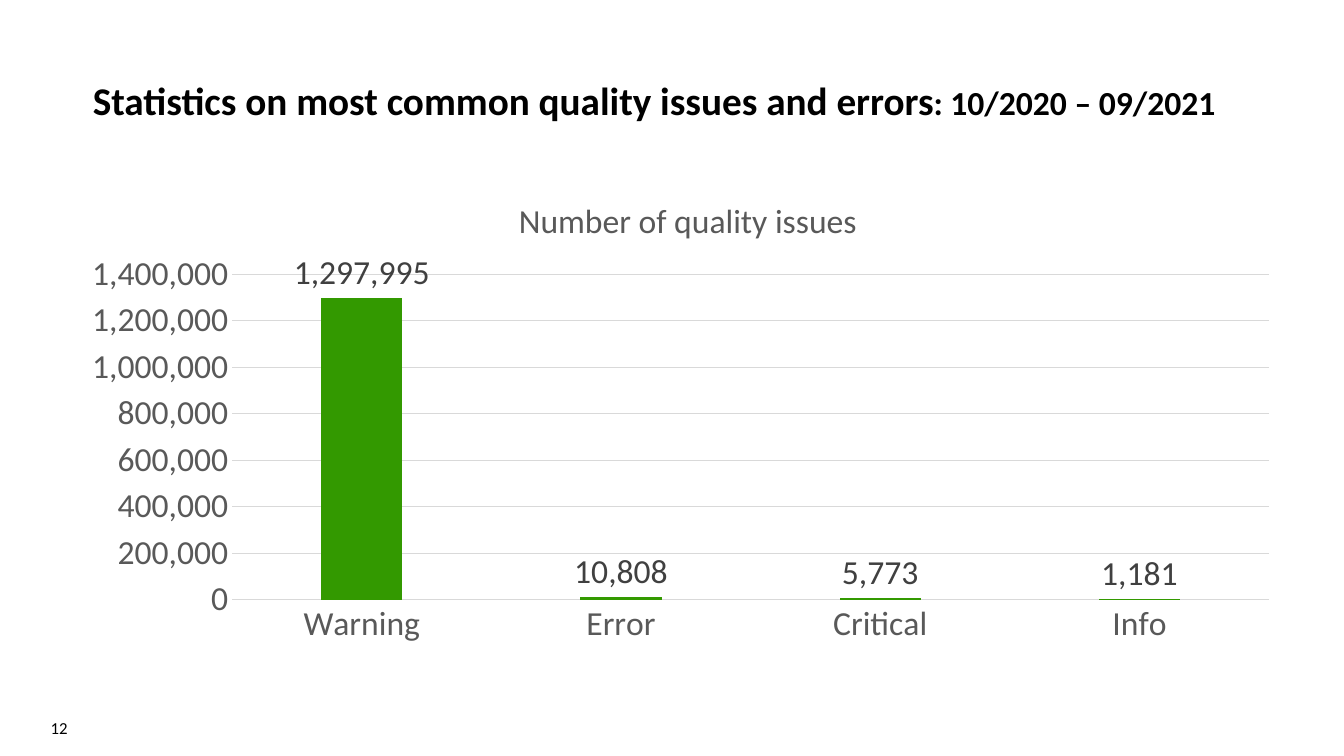
from lxml import etree
from pptx import Presentation
from pptx.chart.data import CategoryChartData
from pptx.dml.color import RGBColor
from pptx.enum import chart as ch, text as tx
from pptx.oxml import parse_xml
from pptx.oxml.ns import nsdecls
from pptx.util import Inches, Pt

COLORS = {"black": "000000", "grey": "595959", "label": "404040",
          "grid": "D9D9D9", "bar": "339900"}
FONT = "Calibri"


def set_text(paragraph, content, size=24, color="black", bold=False):
    run = paragraph.add_run()
    run.text = content
    run.font.name = FONT
    run.font.size = Pt(size)
    run.font.bold = bold
    run.font.color.rgb = RGBColor.from_string(COLORS[color])


def set_layout(parent, index, **fractions):
    target = '<c:layoutTarget val="inner"/>' if "w" in fractions else ""
    modes = "".join(f'<c:{side}Mode val="edge"/>' for side in "xy")
    values = "".join(f'<c:{side} val="{value}"/>' for side, value in fractions.items())
    for old in parent.findall("{*}layout"):
        parent.remove(old)
    parent.insert(index, parse_xml(
        f'<c:layout {nsdecls("c")}><c:manualLayout>{target}{modes}{values}'
        '</c:manualLayout></c:layout>'))


prs = Presentation()
prs.slide_width, prs.slide_height = Inches(13.33), Inches(7.5)
slide = prs.slides.add_slide(prs.slide_layouts[6])

headline = slide.shapes.add_textbox(Inches(0.92), Inches(0.14), Inches(11.48), Inches(1.08)).text_frame
headline.word_wrap = True
headline.vertical_anchor = tx.MSO_ANCHOR.BOTTOM
headline.margin_left = headline.margin_right = headline.margin_bottom = 0
set_text(headline.paragraphs[0], "Statistics on most common quality issues and errors", size=28, bold=True)
set_text(headline.paragraphs[0], ": 10/2020 – 09/2021", bold=True)

issue_counts = CategoryChartData(number_format="#,##0")
issue_counts.categories = ["Warning", "Error", "Critical", "Info"]
issue_counts.add_series("Series 1", [1297995, 10808, 5773, 1181])
issues = slide.shapes.add_chart(
    ch.XL_CHART_TYPE.COLUMN_CLUSTERED, Inches(0.73), Inches(1.66),
    Inches(12.1), Inches(4.82), issue_counts).chart
issues.has_legend = False
issues.font.name = FONT
issues.font.size = Pt(24)

issues.has_title = True
set_text(issues.chart_title.text_frame.paragraphs[0], "Number of quality issues", color="grey")
issues.chart_title.include_in_layout = False
set_layout(issues.chart_title._element, 1, x=0.36, y=0.05)
set_layout(issues._chartSpace.chart.plotArea, 0, x=0.13, y=0.22, w=0.85, h=0.67)

severity, count = issues.category_axis, issues.value_axis
count.minimum_scale, count.maximum_scale, count.major_unit = 0, 1400000, 200000
count.tick_labels.number_format = "#,##0"
count.tick_labels.number_format_is_linked = False
count.format.line.fill.background()
for axis in (severity, count):
    axis.major_tick_mark = axis.minor_tick_mark = ch.XL_TICK_MARK.NONE
    axis.tick_labels.font.name = FONT
    axis.tick_labels.font.size = Pt(24)
    axis.tick_labels.font.color.rgb = RGBColor.from_string(COLORS["grey"])
for line in (severity.format.line, count.major_gridlines.format.line):
    line.color.rgb = RGBColor.from_string(COLORS["grid"])
    line.width = Pt(0.75)

bars = issues.plots[0]
bars.gap_width, bars.overlap = 219, -27
bars.vary_by_categories = False
bars.series[0].format.fill.solid()
bars.series[0].format.fill.fore_color.rgb = RGBColor.from_string(COLORS["bar"])
bar_labels = bars.series[0].data_labels
bar_labels.show_value = True
bar_labels.position = ch.XL_LABEL_POSITION.OUTSIDE_END
bar_labels.number_format = "#,##0"
bar_labels.number_format_is_linked = False
bar_labels.font.name = FONT
bar_labels.font.size = Pt(24)
bar_labels.font.color.rgb = RGBColor.from_string(COLORS["label"])

page_number = slide.shapes.add_textbox(0, Inches(7.02), Inches(0.77), Inches(0.4)).text_frame
page_number.word_wrap = True
page_number.vertical_anchor = tx.MSO_ANCHOR.MIDDLE
page_number.paragraphs[0].alignment = tx.PP_ALIGN.RIGHT
set_text(page_number.paragraphs[0], "12", size=12)

prs.save("out.pptx")
